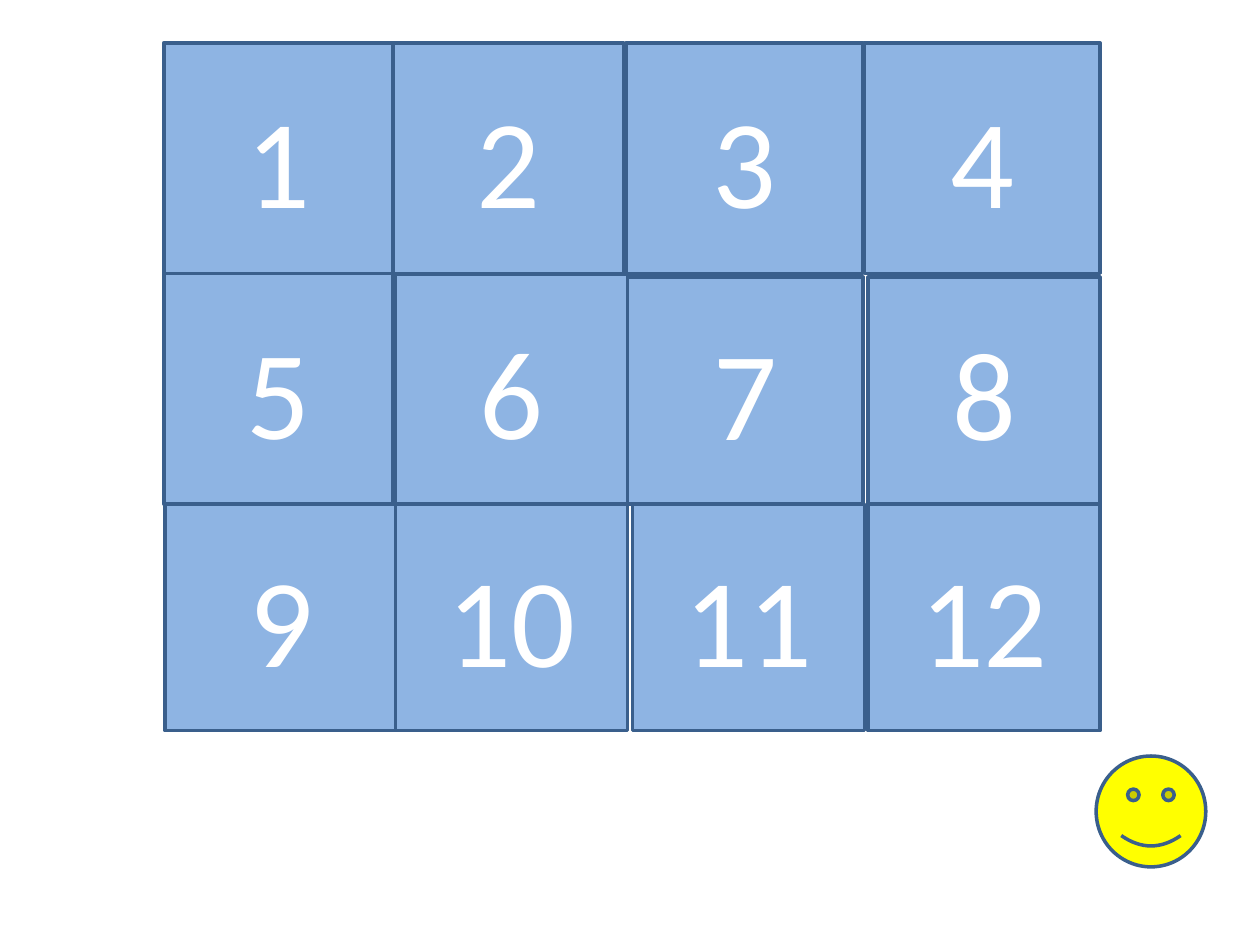
from pptx import Presentation
from pptx import util as u
from pptx.dml.color import RGBColor
from pptx.enum import shapes, text

# Content: each row of numbered tiles, with (left, width) per column
# and (top, bottom) per column, in inches
ROWS = [
    {"labels": ["1", "2", "3", "4"],
     "columns": [(1.3, 1.82), (3.12, 1.83), (4.97, 1.88), (6.86, 1.87)],
     "tops": [0.34] * 4, "bottom": 2.17},
    {"labels": ["5", "6", "7", "8"],
     "columns": [(1.3, 1.82), (3.14, 1.84), (4.98, 1.87), (6.89, 1.84)],
     "tops": [2.17, 2.18, 2.2, 2.2], "bottom": 4},
    {"labels": ["9", "10", "11", "12"],
     "columns": [(1.31, 1.84), (3.14, 1.84), (5.02, 1.84), (6.89, 1.84)],
     "tops": [4] * 4, "bottom": 5.8},
]
SMILEY_BOX = (8.7, 6, 0.87, 0.88)

THEME = {
    "tile": RGBColor.from_string("8EB4E3"),
    "smiley": RGBColor.from_string("FFFF00"),
    "outline": RGBColor.from_string("3A5F8C"),
    "number": RGBColor.from_string("FFFFFF"),
    "line_width": u.Pt(2),
    "font": {"name": "Calibri", "size": u.Pt(72)},
}


def add_outlined_shape(slide, kind, box, fill):
    shape = slide.shapes.add_shape(kind, *(u.Inches(value) for value in box))
    shape.shadow.inherit = False
    shape.fill.solid()
    shape.fill.fore_color.rgb = fill
    shape.line.color.rgb = THEME["outline"]
    shape.line.width = THEME["line_width"]
    return shape


def add_tile(slide, label, box):
    shape = add_outlined_shape(slide, shapes.MSO_SHAPE.RECTANGLE, box, THEME["tile"])
    shape.text_frame.vertical_anchor = text.MSO_ANCHOR.MIDDLE
    paragraph = shape.text_frame.paragraphs[0]
    paragraph.alignment = text.PP_ALIGN.CENTER
    run = paragraph.add_run()
    run.text = label
    for attribute, value in THEME["font"].items():
        setattr(run.font, attribute, value)
    run.font.color.rgb = THEME["number"]


def main():
    presentation = Presentation()
    presentation.slide_width = u.Inches(10)
    presentation.slide_height = u.Inches(7.5)
    slide = presentation.slides.add_slide(presentation.slide_layouts[6])

    # Numbered tiles
    for row in ROWS:
        for label, (left, width), top in zip(row["labels"], row["columns"], row["tops"]):
            add_tile(slide, label, (left, top, width, row["bottom"] - top))

    # Smiley in the lower right corner
    add_outlined_shape(slide, shapes.MSO_SHAPE.SMILEY_FACE, SMILEY_BOX, THEME["smiley"])

    presentation.save("out.pptx")


if __name__ == "__main__":
    main()
